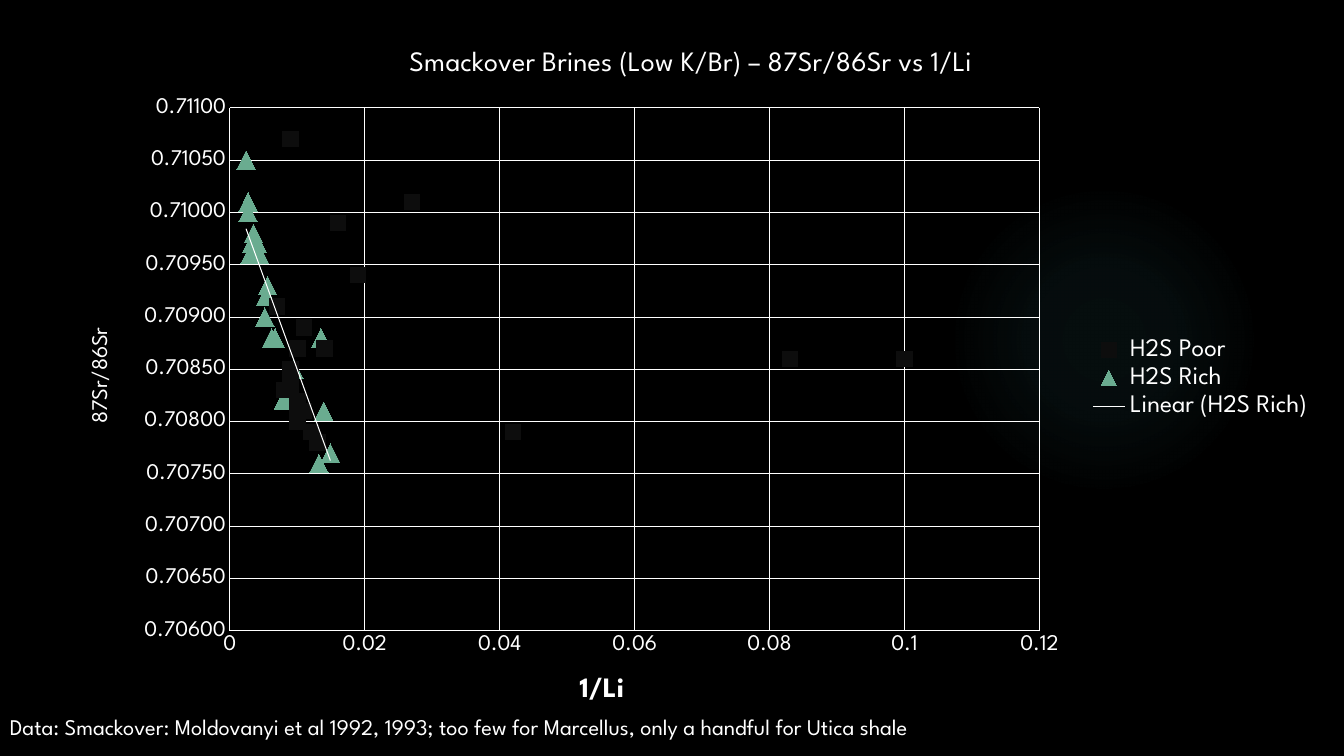
from lxml import etree
from pptx import Presentation
from pptx.chart.data import XyChartData
from pptx.dml.color import RGBColor
from pptx.enum.chart import XL_CHART_TYPE as ChartType
from pptx.enum.chart import XL_LEGEND_POSITION as LegendPosition
from pptx.enum.chart import XL_MARKER_STYLE as Marker
from pptx.enum.chart import XL_TICK_MARK as TickMark
from pptx.enum.shapes import MSO_SHAPE as Shape
from pptx.oxml import parse_xml
from pptx.oxml.ns import nsdecls, qn
from pptx.util import Inches, Pt

BLACK = RGBColor(0x00, 0x00, 0x00)
WHITE = RGBColor(0xFF, 0xFF, 0xFF)
NEAR_BLACK = RGBColor(0x0D, 0x0D, 0x0D)
GREEN = RGBColor(0x6A, 0xAC, 0x90)
TEAL = RGBColor(0x50, 0xB9, 0xC1)
FONT = "League Spartan"

# Points are (1/Li, 87Sr/86Sr)
H2S_POOR = [
    (0.009, 0.7107), (0.008, 0.7083), (0.007, 0.7091), (0.011, 0.7089),
    (0.016, 0.7099), (0.027, 0.7101), (0.01, 0.7087), (0.014, 0.7087),
    (0.011, 0.7081), (0.013, 0.7078), (0.012, 0.7079), (0.1, 0.7086),
    (0.083, 0.7086), (0.042, 0.7079), (0.019, 0.7094), (0.009, 0.7085),
    (0.01, 0.708), (0.009, 0.7084), (0.01, 0.7082), (0.009, 0.7084),
    (0.009, 0.7083), (0.01, 0.7081), (0.01, 0.7081),
]
H2S_RICH = [
    (0.0053, 0.7092), (0.0024, 0.7105), (0.0027, 0.7101), (0.003, 0.7096),
    (0.0032, 0.7097), (0.0027, 0.71), (0.0079, 0.7082), (0.0067, 0.7088),
    (0.0041, 0.7097), (0.0035, 0.7098), (0.0086, 0.7082), (0.0037, 0.7097),
    (0.0044, 0.7096), (0.0132, 0.7076), (0.0135, 0.7088), (0.0149, 0.7077),
    (0.0054, 0.7092), (0.0052, 0.709), (0.0062, 0.7088), (0.0095, 0.7085),
    (0.0139, 0.7081), (0.0056, 0.7093), (0.0056, 0.7093),
]
SERIES = [
    ("H2S Poor", H2S_POOR, Marker.SQUARE, 11, NEAR_BLACK),
    ("H2S Rich", H2S_RICH, Marker.TRIANGLE, 13, GREEN),
]


def style_font(font, size, color=WHITE, bold=False):
    font.name, font.size, font.bold = FONT, Pt(size), bold
    font.color.rgb = color


def write_text(frame, text, **style):
    para = frame.paragraphs[0]
    span = para.add_run()
    span.text = text
    style_font(span.font, **style)


def place_part(element, index, box, inner=False, **inches):
    """Place a chart part, in inches from the corner of the chart box."""
    layout = element.find(qn("c:layout"))
    if layout is None:
        layout = parse_xml(f"<c:layout {nsdecls('c')}/>")
        element.insert(index, layout)
    manual = etree.SubElement(layout, qn("c:manualLayout"))
    settings = {"layoutTarget": "inner"} if inner else {}
    settings.update({"xMode": "edge", "yMode": "edge"})
    for name, length in inches.items():
        settings[name] = length / (box[0] if name in "xw" else box[1])
    for name, value in settings.items():
        etree.SubElement(manual, qn(f"c:{name}")).set("val", str(value))


def add_glow(slide, left, top, size):
    glow = slide.shapes.add_shape(
        Shape.OVAL, Inches(left), Inches(top), Inches(size), Inches(size))
    glow.shadow.inherit = False
    glow.line.fill.background()
    glow.fill.gradient()
    gradient = glow.fill._xPr.find(qn("a:gradFill"))
    stops = "".join(
        f'<a:gs pos="{place * 1000}"><a:srgbClr val="{TEAL}">'
        f'<a:alpha val="{alpha * 1000}"/></a:srgbClr></a:gs>'
        for place, alpha in [(0, 7), (36, 6), (69, 0)])
    radial = parse_xml(
        f'<a:gradFill {nsdecls("a")}><a:gsLst>{stops}</a:gsLst>'
        '<a:path path="circle"><a:fillToRect l="50000" t="50000" r="50000" '
        'b="50000"/></a:path></a:gradFill>')
    gradient.getparent().replace(gradient, radial)


def style_axis(axis, title, title_size, low, high, step, number_format,
               bold=False):
    axis.minimum_scale, axis.maximum_scale, axis.major_unit = low, high, step
    axis.major_tick_mark = axis.minor_tick_mark = TickMark.NONE
    axis.has_major_gridlines = True
    for line in (axis.format.line, axis.major_gridlines.format.line):
        line.color.rgb = WHITE
        line.width = Pt(0.75)
    style_font(axis.tick_labels.font, 16)
    axis.tick_labels.number_format = number_format
    axis.tick_labels.number_format_is_linked = False
    write_text(axis.axis_title.text_frame, title, size=title_size, bold=bold)


def add_trendline(series):
    trend = parse_xml(
        f'<c:trendline {nsdecls("c", "a")}><c:spPr><a:ln w="9525"><a:solidFill>'
        f'<a:srgbClr val="{WHITE}"/></a:solidFill></a:ln></c:spPr>'
        '<c:trendlineType val="linear"/><c:dispRSqr val="0"/>'
        '<c:dispEq val="0"/></c:trendline>')
    series._element.find(qn("c:xVal")).addprevious(trend)


def add_scatter(slide, left, top, width, height):
    data = XyChartData()
    for name, points, *_ in SERIES:
        group = data.add_series(name)
        for x, y in points:
            group.add_data_point(x, y)
    chart = slide.shapes.add_chart(
        ChartType.XY_SCATTER, Inches(left), Inches(top), Inches(width),
        Inches(height), data).chart
    style_font(chart.font, 10)
    box = (width, height)

    # Title and legend
    chart.has_title = True
    write_text(chart.chart_title.text_frame,
               "Smackover Brines (Low K/Br) – 87Sr/86Sr vs 1/Li", size=20)
    place_part(chart.chart_title._element, 1, box, x=3.35, y=0.16)
    chart.has_legend = True
    chart.legend.position = LegendPosition.RIGHT
    chart.legend.include_in_layout = False
    style_font(chart.legend.font, 18)

    # Axes and plot area
    across, up = chart.category_axis, chart.value_axis
    style_axis(across, "1/Li", 20, 0, 0.12, 0.02, "General", bold=True)
    style_axis(up, "87Sr/86Sr", 16, 0.706, 0.711, 0.0005, "0.00000")
    frame = up.axis_title.text_frame
    frame._txBody.find(qn("a:bodyPr")).set("rot", "-5400000")
    place_part(across.axis_title._element, 1, box, x=5.04, y=6.37)
    place_part(up.axis_title._element, 1, box, x=0.18, y=2.94)
    place_part(chart._chartSpace.chart.plotArea, 0, box, inner=True,
               x=1.62, y=0.8, w=8.03, h=5.19)

    # Series
    plot = chart.plots[0]
    plot.vary_by_categories = False
    for series, (_, _, marker, size, color) in zip(plot.series, SERIES):
        series.format.line.fill.background()
        series.smooth = False
        series.marker.style, series.marker.size = marker, size
        for fill in (series.marker.format.fill, series.marker.format.line.fill):
            fill.solid()
            fill.fore_color.rgb = color
    add_trendline(plot.series[1])


def add_source_note(slide, left, top, width, height):
    box = slide.shapes.add_textbox(
        Inches(left), Inches(top), Inches(width), Inches(height))
    box.text_frame.word_wrap = True
    write_text(box.text_frame,
               "Data: Smackover: Moldovanyi et al 1992, 1993; too few for "
               "Marcellus, only a handful for Utica shale", size=16)


def main():
    deck = Presentation()
    deck.slide_width, deck.slide_height = Inches(13.33), Inches(7.5)
    slide = deck.slides.add_slide(deck.slide_layouts[6])
    slide.background.fill.solid()
    slide.background.fill.fore_color.rgb = BLACK
    add_glow(slide, 9.41, 1.83, 3.08)
    add_scatter(slide, 0.66, 0.27, 12.47, 6.96)
    add_source_note(slide, 0, 7.03, 12.47, 0.37)
    deck.save("out.pptx")


if __name__ == "__main__":
    main()
